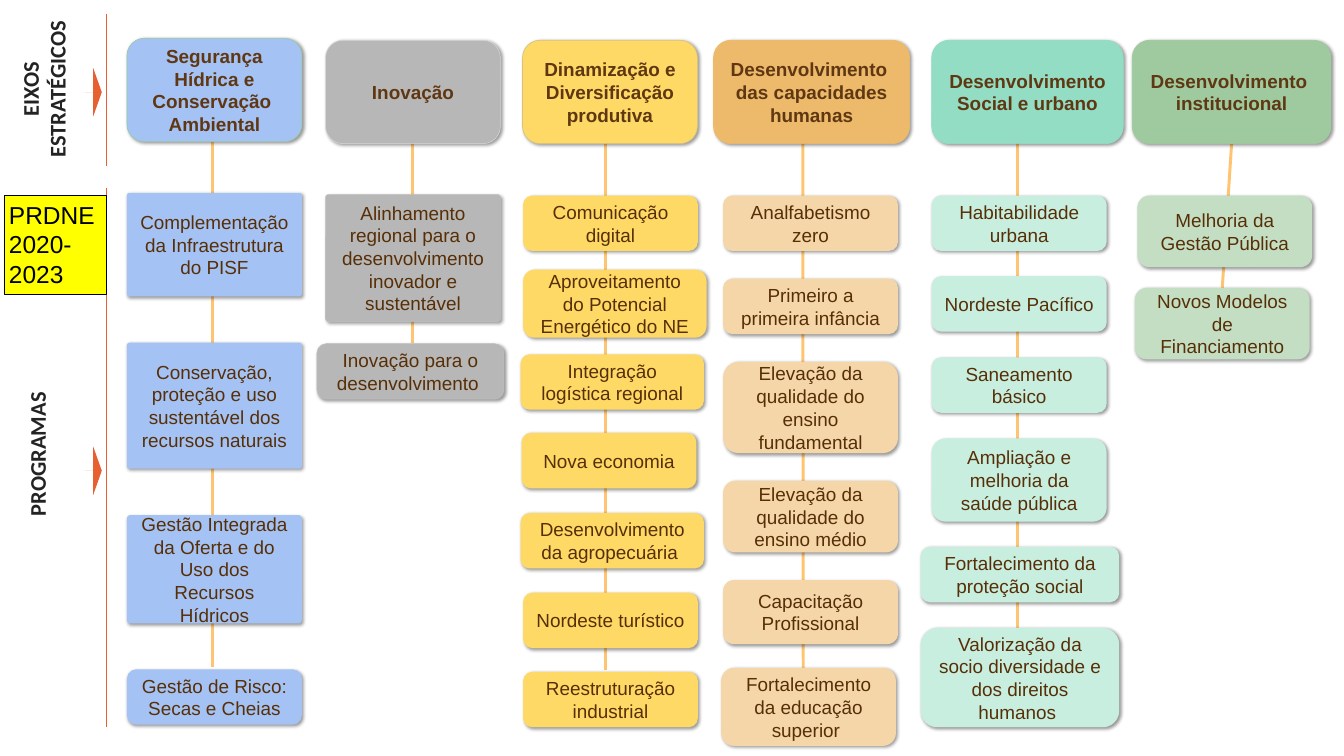
from lxml.etree import SubElement
from pptx import Presentation
from pptx.dml.color import RGBColor
from pptx.enum.shapes import MSO_CONNECTOR, MSO_SHAPE
from pptx.enum.text import MSO_ANCHOR, MSO_AUTO_SIZE, PP_ALIGN
from pptx.oxml.ns import qn
from pptx.util import Pt

PX = 9144
W, H = 2667, 1500
HEAD_TEXT, BODY_TEXT, LINK, ACCENT = "5F3813", "572F07", "FFC471", "E76031"
ROUND = 0.167

# Program: text, top, height, then optional overrides of the column
COLUMNS = [
    dict(head=["Segurança Hídrica e Conservação ", "Ambiental"], box=(252, 76, 347, 205),
         fill="A4C2F4", edge="97CBAB", tint="A4C2F4", left=252, link=(422, 173, 422, 1324),
         programs=[
             ("Complementação da Infraestrutura do PISF", 383, 205, dict(corner=0.023)),
             ("Conservação, proteção e uso sustentável dos recursos naturais", 680, 250, dict(corner=0.019)),
             ("Gestão Integrada da Oferta e do Uso dos Recursos Hídricos", 1022, 215, dict(corner=0.031)),
             ("Gestão de Risco: Secas e Cheias", 1328, 110, {})]),
    dict(head=["Inovação"], box=(646, 80, 347, 205),
         fill="B7B7B7", edge="D8D8D8", edge_pt=0.75, tint="B7B7B7", tint_edge="BFBFBF",
         left=646, link=(819, 203, 819, 680),
         programs=[
             ("Alinhamento regional para o desenvolvimento inovador e sustentável", 386, 252, dict(corner=0.024)),
             ("Inovação para o desenvolvimento ", 682, 110, dict(left=629, width=371))]),
    dict(head=["Dinamização e", "Diversificação", "produtiva"], box=(1037, 80, 347, 205),
         fill="FFD966", edge="D7C27E", tint="FFD966", left=1038, link=(1201, 177, 1201, 1329),
         programs=[
             ("Comunicação digital", 388, 110, {}),
             ("Aproveitamento do Potencial Energético do NE", 535, 135, dict(width=364)),
             ("Integração logística regional", 703, 110, dict(left=1033, width=364)),
             ("Nova economia", 859, 110, dict(left=1035)),
             ("Desenvolvimento da agropecuária ", 1018, 110, dict(left=1033, width=364)),
             ("Nordeste turístico", 1176, 110, {}),
             ("Reestruturação industrial", 1333, 110, {})]),
    dict(head=["Desenvolvimento ", "das capacidades", "humanas"], box=(1416, 80, 389, 205),
         fill="EDB96A", edge="EDB96A", tint="F5D6A9", left=1435, link=(1593, 210, 1594, 1359),
         programs=[
             ("Analfabetismo zero", 388, 110, {}),
             ("Primeiro a primeira infância", 553, 110, {}),
             ("Elevação da qualidade do ensino fundamental", 718, 181, {}),
             ("Elevação da qualidade do ensino médio", 954, 142, {}),
             ("Capacitação Profissional", 1151, 127, {}),
             ("Fortalecimento da educação superior ", 1325, 155, dict(left=1431))]),
    dict(head=["Desenvolvimento ", "Social e urbano"], box=(1849, 80, 380, 205),
         fill="92DDC3", edge="92DDC3", tint="C8EEE0", left=1849, link=(2019, 174, 2019, 1364),
         programs=[
             ("Habitabilidade urbana", 388, 110, {}),
             ("Nordeste Pacífico", 548, 110, {}),
             ("Saneamento básico", 709, 110, {}),
             ("Ampliação e melhoria da saúde pública", 870, 165, {}),
             ("Fortalecimento da proteção social", 1085, 110, dict(left=1827, width=394)),
             ("Valorização da socio diversidade e dos direitos humanos ", 1246, 197, dict(left=1827, width=394))]),
    dict(head=["Desenvolvimento ", "institucional"], box=(2247, 80, 394, 205),
         fill="9FCA9F", edge="9FCA9F", tint="C4DEC4", left=2257, link=(2444, 285, 2426, 571), joined=True,
         programs=[
             ("Melhoria da Gestão Pública", 388, 142, {}),
             ("Novos Modelos de Financiamento", 571, 142, dict(left=2252))]),
]
SECTIONS = [
    dict(label="EIXOS ESTRATÉGICOS", box=(-109, 113, 391, 128), arrow=135, rule=(27, 330)),
    dict(label="PROGRAMAS", box=(-122, 864, 391, 74), arrow=886, rule=(373, 1443)),
]


def emu(*px):
    return [v * PX for v in px]


def rgb(code):
    return RGBColor.from_string(code)


def write(shape, lines, size, color, font="Arial", bold=False, align=PP_ALIGN.CENTER,
          anchor=MSO_ANCHOR.MIDDLE, inset=20, grow=False):
    tf = shape.text_frame
    tf.word_wrap = True
    tf.vertical_anchor = anchor
    tf.margin_left = tf.margin_right = inset * PX
    tf.margin_top = tf.margin_bottom = 10 * PX
    if grow:
        tf.auto_size = MSO_AUTO_SIZE.SHAPE_TO_FIT_TEXT
    for i, line in enumerate(lines):
        p = tf.paragraphs[0] if i == 0 else tf.add_paragraph()
        p.alignment = align
        r = p.add_run()
        r.text = line
        r.font.size, r.font.name, r.font.bold = Pt(size), font, bold
        r.font.color.rgb = rgb(color)


def add_box(kind, box, fill, edge=None, edge_pt=0.75):
    sp = s.shapes.add_shape(kind, *emu(*box))
    sp.shadow.inherit = False
    sp.fill.solid()
    sp.fill.fore_color.rgb = rgb(fill)
    if edge:
        sp.line.color.rgb = rgb(edge)
        sp.line.width = Pt(edge_pt)
    else:
        sp.line.fill.background()
    return sp


def add_card(box, lines, fill, color, edge=None, edge_pt=0.75, corner=ROUND, bold=False):
    sp = add_box(MSO_SHAPE.ROUNDED_RECTANGLE, box, fill, edge, edge_pt)
    sp.adjustments[0] = corner
    effects = sp._element.spPr.find(qn("a:effectLst"))
    shadow = SubElement(effects, qn("a:outerShdw"), blurRad=str(Pt(5)), dist=str(Pt(3)),
                        dir="2700000", algn="bl", rotWithShape="0")
    tone = SubElement(shadow, qn("a:srgbClr"), val="000000")
    SubElement(tone, qn("a:alpha"), val="40000")
    write(sp, lines, 27, color, bold=bold)
    return sp


def add_line(ends, color, width):
    c = s.shapes.add_connector(MSO_CONNECTOR.STRAIGHT, *emu(*ends))
    c.line.color.rgb = rgb(color)
    c.line.width = Pt(width)
    SubElement(c._element.spPr, qn("a:effectLst"))
    return c


prs = Presentation()
prs.slide_width, prs.slide_height = emu(W, H)
s = prs.slides.add_slide(prs.slide_layouts[6])

links = [add_line(col["link"], LINK, 4.25) for col in COLUMNS]

for col, link in zip(COLUMNS, links):
    head = add_card(col["box"], col["head"], col["fill"], HEAD_TEXT, col["edge"],
                    col.get("edge_pt", 1), bold=True)
    for text, top, height, own in col["programs"]:
        box = (own.get("left", col["left"]), top, own.get("width", 347), height)
        card = add_card(box, [text], col["tint"], BODY_TEXT, col.get("tint_edge"),
                        corner=own.get("corner", ROUND))
    if col.get("joined"):
        link.begin_connect(head, 2)
        link.end_connect(card, 0)

for section in SECTIONS:
    tb = s.shapes.add_textbox(*emu(*section["box"]))
    tb.rotation = 270
    write(tb, [section["label"]], 32, "232422", font="Calibri", bold=True,
          anchor=MSO_ANCHOR.TOP, grow=True)
    arrow = add_box(MSO_SHAPE.RIGHT_ARROW, (168, section["arrow"], 34, 96), ACCENT)
    arrow.adjustments[0] = 0
    arrow.adjustments[1] = 0.5
    top, bottom = section["rule"]
    add_line((210, top, 210, bottom), ACCENT, 0.75)

plan = add_box(MSO_SHAPE.RECTANGLE, (8, 387, 202, 197), "FFFF00", "000000")
write(plan, ["PRDNE 2020-", "2023"], 35, "000000", align=PP_ALIGN.LEFT,
      anchor=MSO_ANCHOR.TOP, inset=10, grow=True)

prs.save("out.pptx")
